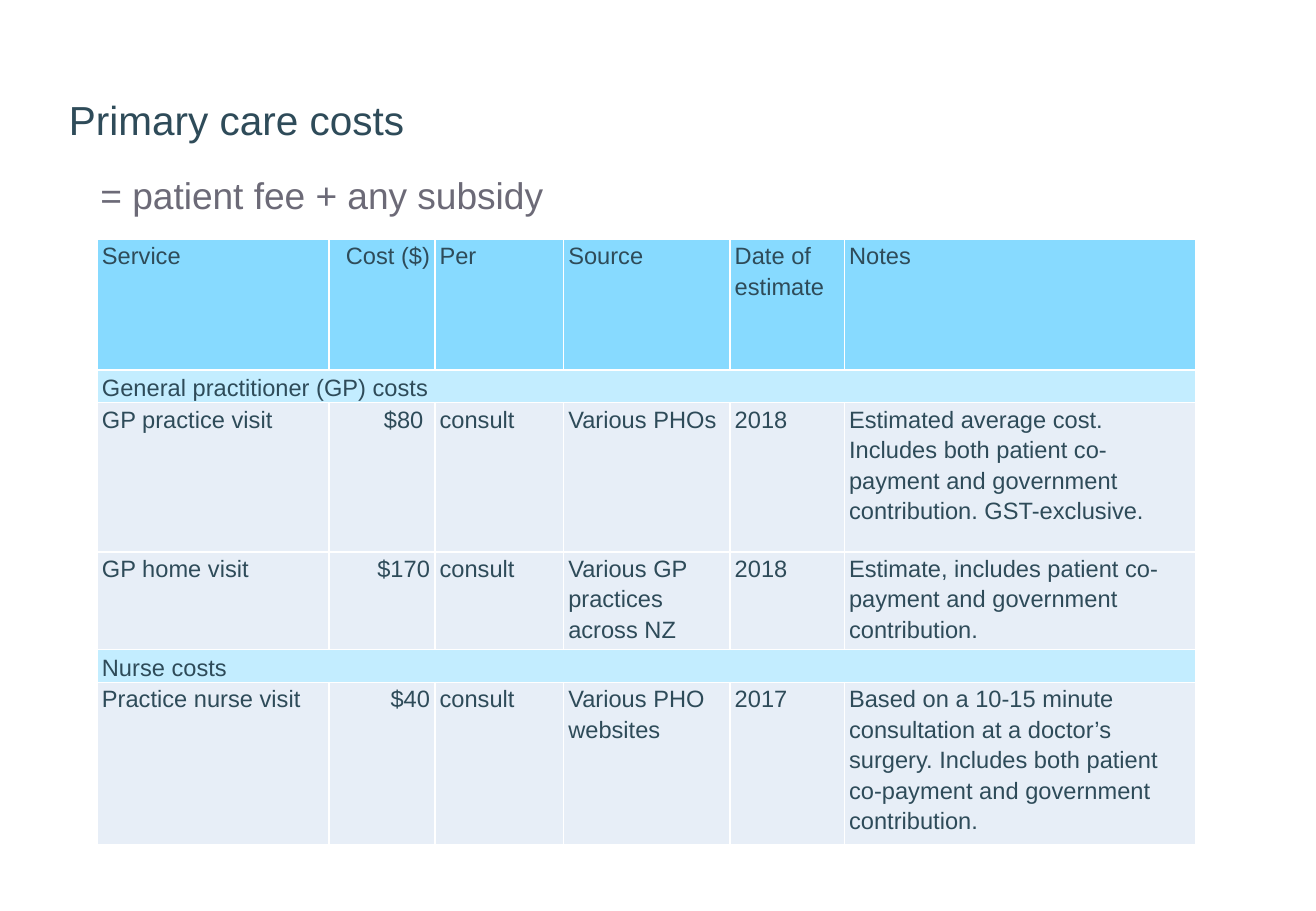
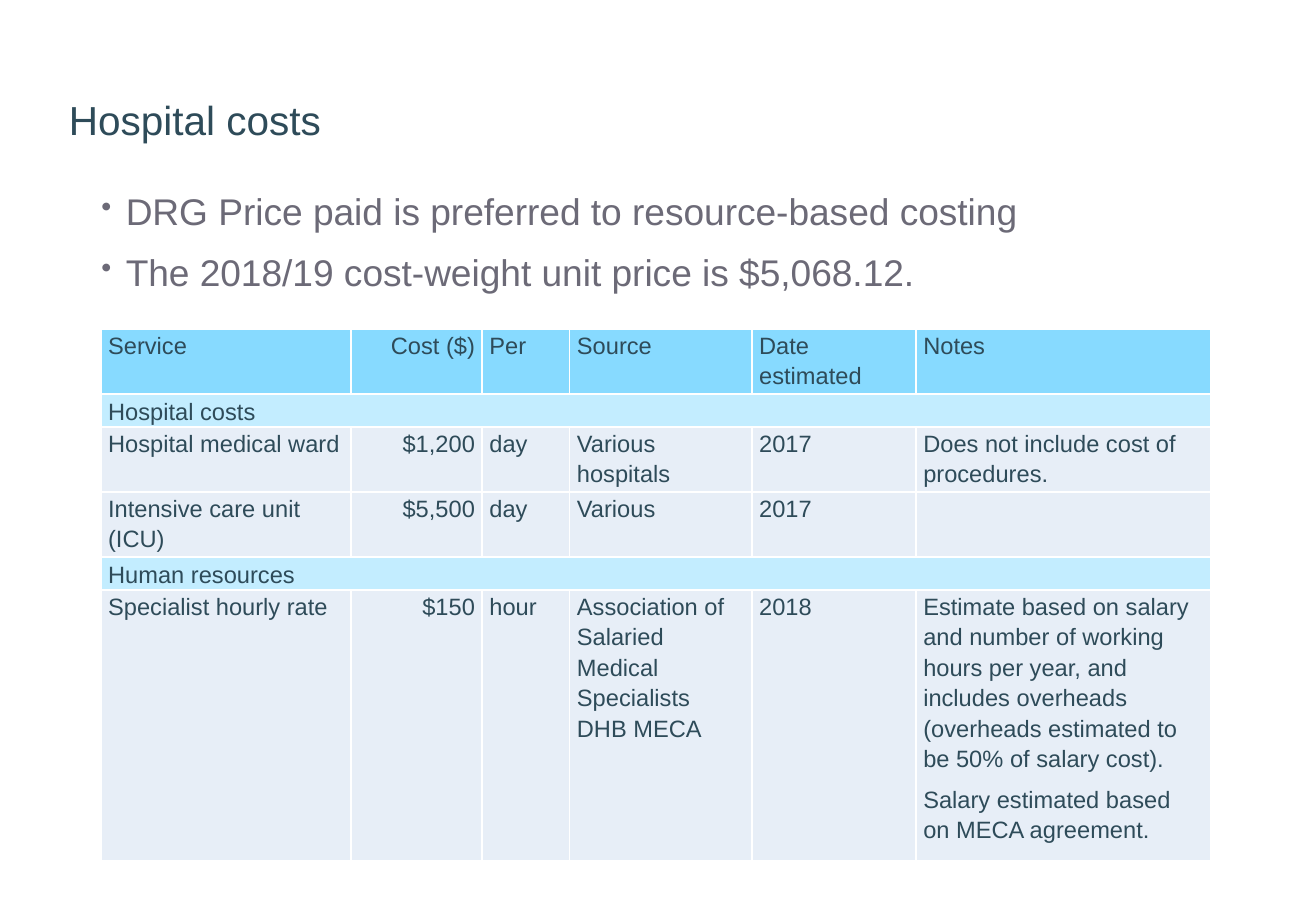
from lxml.etree import SubElement as Sub
from pptx import Presentation
from pptx.dml.color import RGBColor
from pptx.enum.text import MSO_ANCHOR as Anchor, PP_ALIGN as Align
from pptx.oxml.ns import qn
from pptx.util import Cm, Pt

FONT = "Arial"
INK = RGBColor(0x2E, 0x4B, 0x59)
GREY = RGBColor(0x6C, 0x6A, 0x77)
HEAD = RGBColor(0x87, 0xDA, 0xFF)
BAND = RGBColor(0xC3, 0xED, 0xFF)
PALE = RGBColor(0xE7, 0xEE, 0xF7)
EDGE = RGBColor(0xFF, 0xFF, 0xFF)

CARE = [
    ("Service", "Cost ($)", "Per", "Source", "Date of estimate", "Notes"),
    ("General practitioner (GP) costs",),
    ("GP practice visit", "$80 ", "consult", "Various PHOs", "2018",
     "Estimated average cost. Includes both patient co-payment and "
     "government contribution. GST-exclusive."),
    ("GP home visit", "$170", "consult", "Various GP practices across NZ", "2018",
     "Estimate, includes patient co-payment and government contribution."),
    ("Nurse costs",),
    ("Practice nurse visit", "$40", "consult", "Various PHO websites", "2017",
     "Based on a 10-15 minute consultation at a doctor’s surgery. "
     "Includes both patient co-payment and government contribution."),
]
WARD = [
    ("Service", "Cost ($)", "Per", "Source", "Date estimated", "Notes"),
    ("Hospital costs",),
    ("Hospital medical ward", "$1,200", "day", "Various hospitals", "2017",
     "Does not include cost of procedures."),
    ("Intensive care unit (ICU)", "$5,500", "day", "Various", "2017", ""),
    ("Human resources",),
    ("Specialist hourly rate", "$150", "hour",
     "Association of Salaried Medical Specialists DHB MECA", "2018",
     "Estimate based on salary and number of working hours per year, and "
     "includes overheads (overheads estimated to be 50% of salary cost).\n"
     "Salary estimated based on MECA agreement."),
]


def style(para, size, color):
    for run in para.runs:
        run.font.name = FONT
        run.font.size = Pt(size)
        run.font.color.rgb = color


def add_text(slide, box, text, size, color):
    frame = slide.shapes.add_textbox(*map(Cm, box)).text_frame
    frame.word_wrap = True
    frame.text = text
    for para in frame.paragraphs:
        style(para, size, color)
    return frame


def add_title(slide, text):
    frame = add_text(slide, (1.19, 1.32, 25.12, 1.8), text, 24, INK)
    frame.vertical_anchor = Anchor.BOTTOM


def add_body(slide, box, text, left, hang=0):
    frame = add_text(slide, box, text, 22, GREY)
    for i, para in enumerate(frame.paragraphs):
        props = para._p.get_or_add_pPr()
        props.set("marL", str(Cm(left)))
        props.set("indent", str(Cm(-hang)))
        if hang:
            tint = Sub(Sub(props, qn("a:buClr")), qn("a:srgbClr"))
            tint.set("val", str(GREY))
            Sub(props, qn("a:buSzPct")).set("val", "80000")
            Sub(props, qn("a:buChar")).set("char", "•")
        para.space_before = Pt(7.5 if i else 0)
        para.space_after = Pt(2.5)


def add_edges(cell):
    props = cell._tc.get_or_add_tcPr()
    for side in "LRTB":
        line = Sub(props, qn("a:ln" + side), w=str(Pt(1)))
        tint = Sub(Sub(line, qn("a:solidFill")), qn("a:srgbClr"))
        tint.set("val", str(EDGE))


def fill_cell(cell, text, fill, align, pad):
    add_edges(cell)
    cell.fill.solid()
    cell.fill.fore_color.rgb = fill
    cell.margin_left = cell.margin_right = Cm(pad)
    cell.margin_top = cell.margin_bottom = 0
    cell.text_frame.text = text
    for para in cell.text_frame.paragraphs:
        para.alignment = align
        para.line_spacing = 1.15
        para.space_after = Pt(6)
        style(para, 14, INK)


def add_costs(slide, left, top, wides, highs, rows, pad):
    grid = slide.shapes.add_table(
        len(rows), len(wides), Cm(left), Cm(top), Cm(sum(wides)), Cm(sum(highs))).table
    for col, wide in zip(grid.columns, wides):
        col.width = Cm(wide)
    for r, (row, high) in enumerate(zip(rows, highs)):
        grid.rows[r].height = Cm(high)
        band = len(row) == 1
        fill = HEAD if r == 0 else BAND if band else PALE
        if band:
            grid.cell(r, 0).merge(grid.cell(r, len(wides) - 1))
            grid.cell(r, 0).vertical_anchor = Anchor.MIDDLE
        for c in range(len(wides)):
            text = row[c] if c < len(row) else ""
            align = Align.RIGHT if c == 1 else Align.LEFT
            fill_cell(grid.cell(r, c), text, fill, align, pad)


def add_care(slide):
    add_title(slide, "Primary care costs")
    add_body(slide, (1.09, 3.48, 25.22, 1.8), "= patient fee + any subsidy", 0.76)
    add_costs(slide, 2.03, 5, (4.85, 2.21, 2.69, 3.48, 2.39, 7.34),
              (2.74, 0.64, 3.12, 1.95, 0.64, 3.33), CARE, 0.1)


def add_ward(slide):
    add_title(slide, "Hospital costs")
    add_body(slide, (1.14, 3.81, 25.22, 3.05),
             "DRG Price paid is preferred to resource-based costing\n"
             "The 2018/19 cost-weight unit price is $5,068.12.", 1.24, 0.51)
    add_costs(slide, 2.11, 6.88, (5.23, 2.74, 1.83, 3.81, 3.43, 6.15),
              (1.27, 0.64, 1.27, 1.27, 0.64, 5.31), WARD, 0.15)


def main():
    deck = Presentation()
    deck.slide_width, deck.slide_height = Cm(27.51), Cm(19.05)
    for build in (add_care, add_ward):
        build(deck.slides.add_slide(deck.slide_layouts[6]))
    deck.save("out.pptx")


if __name__ == "__main__":
    main()
